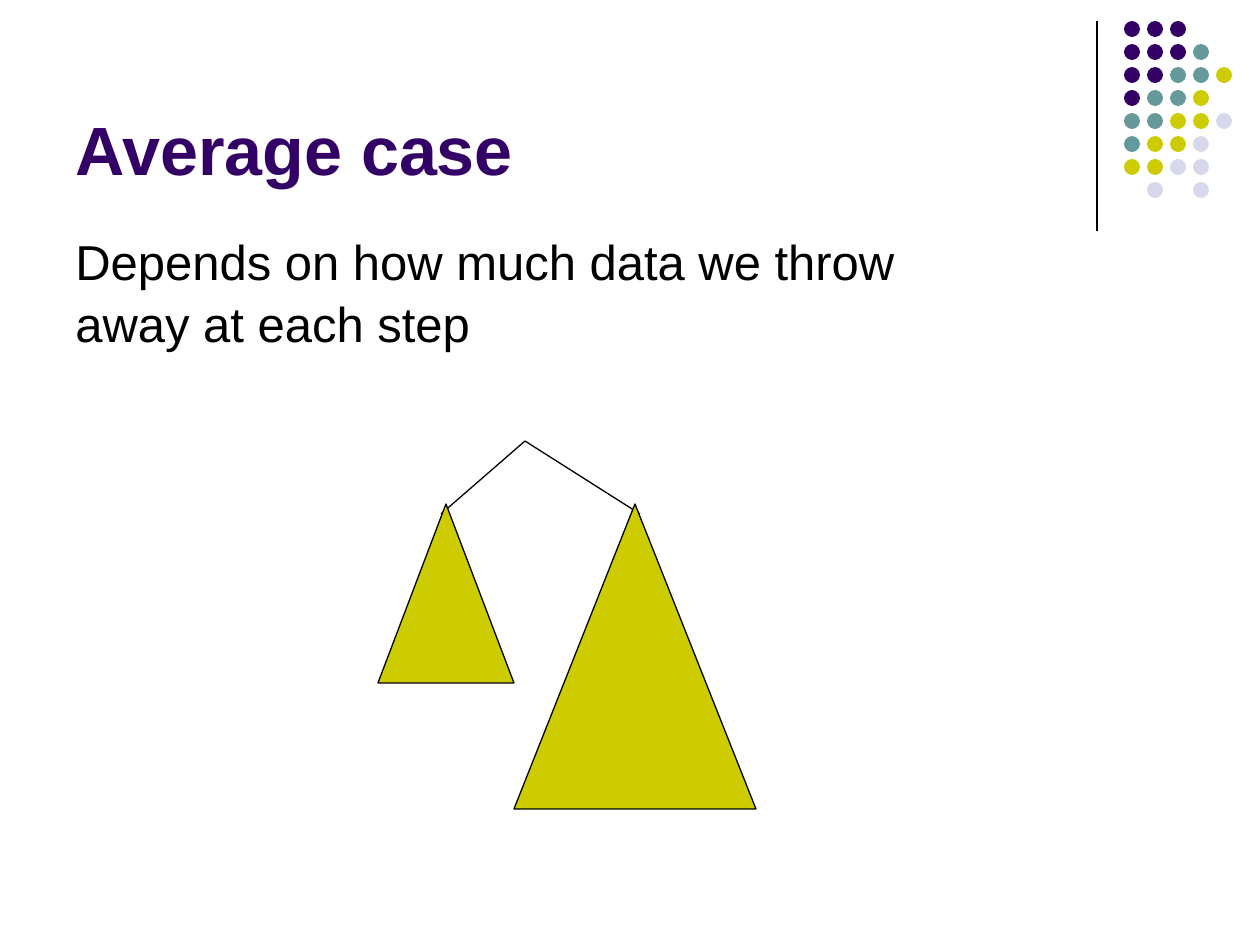
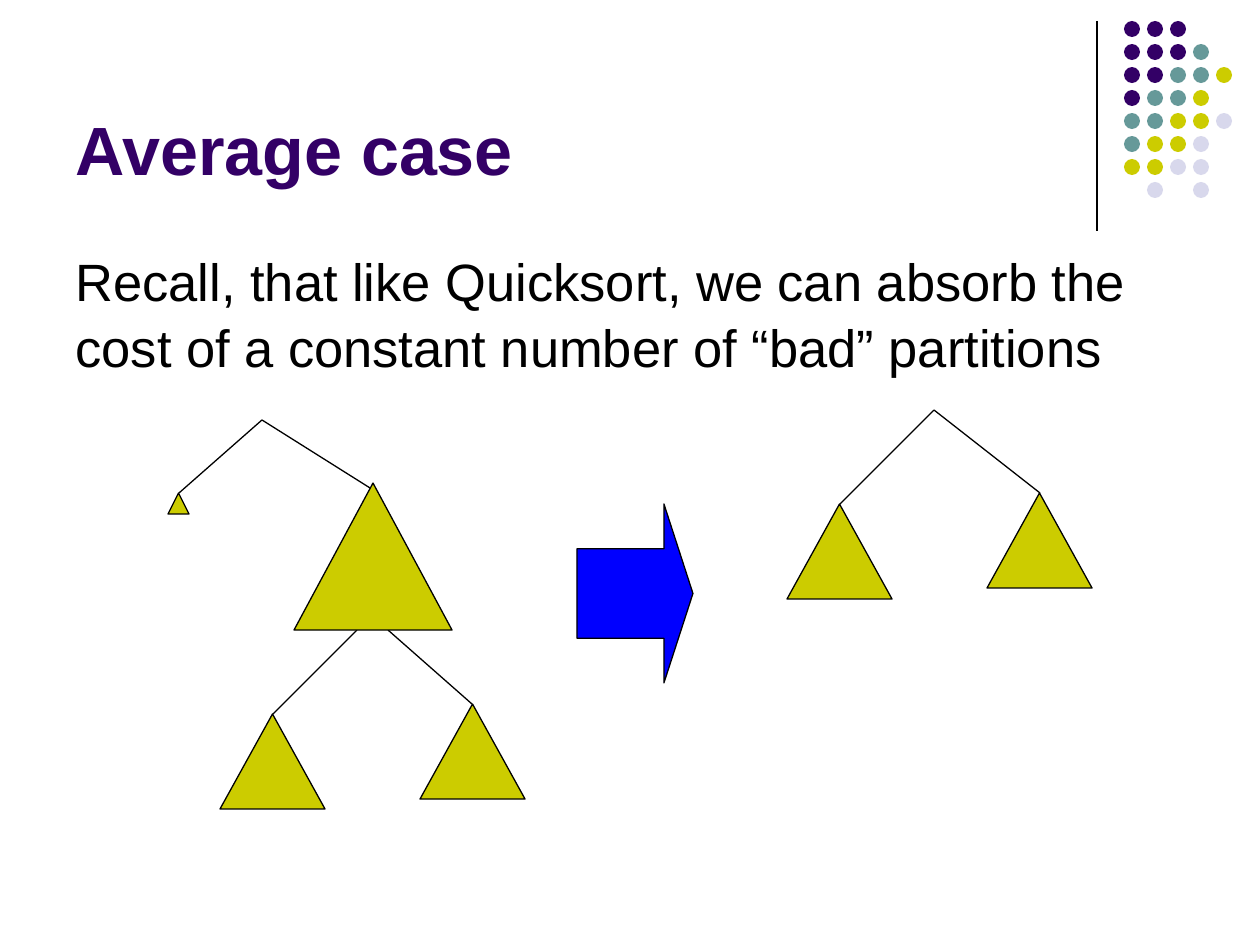
from lxml import etree
from pptx import Presentation, util as u
from pptx.dml.color import RGBColor
from pptx.enum import shapes, text
from pptx.oxml.ns import qn

PX = 914400 / 126
FONT = "Arial"
COLORS = {
    "purple": "330066",
    "teal": "669999",
    "olive": "CCCC00",
    "lavender": "D8D8EC",
    "blue": "0000FF",
    "black": "000000",
}

DOT_ROWS = ["PPP", "PPPT", "PPTTO", "PTTO", "TTOOL", "TOOL", "OOLL", " L L"]
DOT_COLORS = {"P": "purple", "T": "teal", "O": "olive", "L": "lavender"}
DOT_LEFT, DOT_TOP, DOT_SIZE, DOT_PITCH = 1124, 21, 16, 23
DIVIDER = (1097, 21, 1097, 231)
TITLE_BOX = (63, 16, 1040, 179)

SLIDES = [
    {
        "title": "Average case",
        "body": "Depends on how much data we throw away at each step",
        "body_box": (63, 220, 966, 220),
        "body_size": 28,
        "branches": [(525, 441, 441, 514), (525, 441, 640, 514)],
        "subtrees": [(378, 504, 136, 179), (514, 504, 242, 305)],
        "arrows": [],
    },
    {
        "title": "Average case",
        "body": "Recall, that like Quicksort, we can absorb the cost of a "
                "constant number of “bad” partitions",
        "body_box": (63, 237, 1134, 151),
        "body_size": 30,
        "branches": [
            (262, 420, 179, 493), (262, 420, 378, 493),
            (357, 630, 273, 714), (388, 630, 472, 704),
            (934, 410, 840, 504), (934, 410, 1040, 493),
        ],
        "subtrees": [
            (168, 493, 21, 21), (294, 483, 158, 147),
            (220, 714, 105, 95), (420, 704, 105, 95),
            (787, 504, 105, 95), (987, 493, 105, 95),
        ],
        "arrows": [(577, 504, 116, 179)],
    },
]


def emu(*lengths):
    return [u.Emu(round(length * PX)) for length in lengths]


def color(name):
    return RGBColor.from_string(COLORS[name])


def add_text(slide, words, box, size, fill="black", bold=False,
             anchor=text.MSO_ANCHOR.TOP, line_spacing=1.0, top_inset=6):
    frame = slide.shapes.add_textbox(*emu(*box)).text_frame
    frame.word_wrap = True
    frame.vertical_anchor = anchor
    frame.margin_top = emu(top_inset)[0]
    paragraph = frame.paragraphs[0]
    paragraph.line_spacing = line_spacing
    run = paragraph.add_run()
    run.text = words
    run.font.name = FONT
    run.font.size = u.Pt(size)
    run.font.bold = bold
    run.font.color.rgb = color(fill)


def add_preset(parent, preset, box, fill, outlined=True):
    shape = parent.shapes.add_shape(preset, *emu(*box))
    shape.shadow.inherit = False
    shape.fill.solid()
    shape.fill.fore_color.rgb = color(fill)
    if outlined:
        shape.line.color.rgb = color("black")
        shape.line.width = u.Pt(0.75)
    else:
        shape.line.fill.background()
    return shape


def add_line(slide, ends):
    line = slide.shapes.add_connector(shapes.MSO_CONNECTOR.STRAIGHT, *emu(*ends))
    line.line.color.rgb = color("black")
    line.line.width = u.Pt(0.75)
    properties = line._element.find(qn("p:spPr"))
    etree.SubElement(properties, qn("a:effectLst"))


def add_decoration(slide):
    add_line(slide, DIVIDER)
    dots = slide.shapes.add_group_shape()
    for row, keys in enumerate(DOT_ROWS):
        for column, key in enumerate(keys):
            if key in DOT_COLORS:
                box = (DOT_LEFT + column * DOT_PITCH, DOT_TOP + row * DOT_PITCH,
                       DOT_SIZE, DOT_SIZE)
                add_preset(dots, shapes.MSO_SHAPE.OVAL, box, DOT_COLORS[key],
                           outlined=False)


def add_slide(presentation, content):
    slide = presentation.slides.add_slide(presentation.slide_layouts[6])
    add_decoration(slide)
    add_text(slide, content["title"], TITLE_BOX, 39, fill="purple", bold=True,
             anchor=text.MSO_ANCHOR.BOTTOM)
    add_text(slide, content["body"], content["body_box"], content["body_size"],
             line_spacing=1.05, top_inset=9)
    for ends in content["branches"]:
        add_line(slide, ends)
    for box in content["subtrees"]:
        add_preset(slide, shapes.MSO_SHAPE.ISOSCELES_TRIANGLE, box, "olive")
    for box in content["arrows"]:
        arrow = add_preset(slide, shapes.MSO_SHAPE.RIGHT_ARROW, box, "blue")
        arrow.adjustments[0] = 0.5
        arrow.adjustments[1] = 0.25


def main():
    presentation = Presentation()
    presentation.slide_width, presentation.slide_height = emu(1260, 945)
    for content in SLIDES:
        add_slide(presentation, content)
    presentation.save("out.pptx")


if __name__ == "__main__":
    main()
